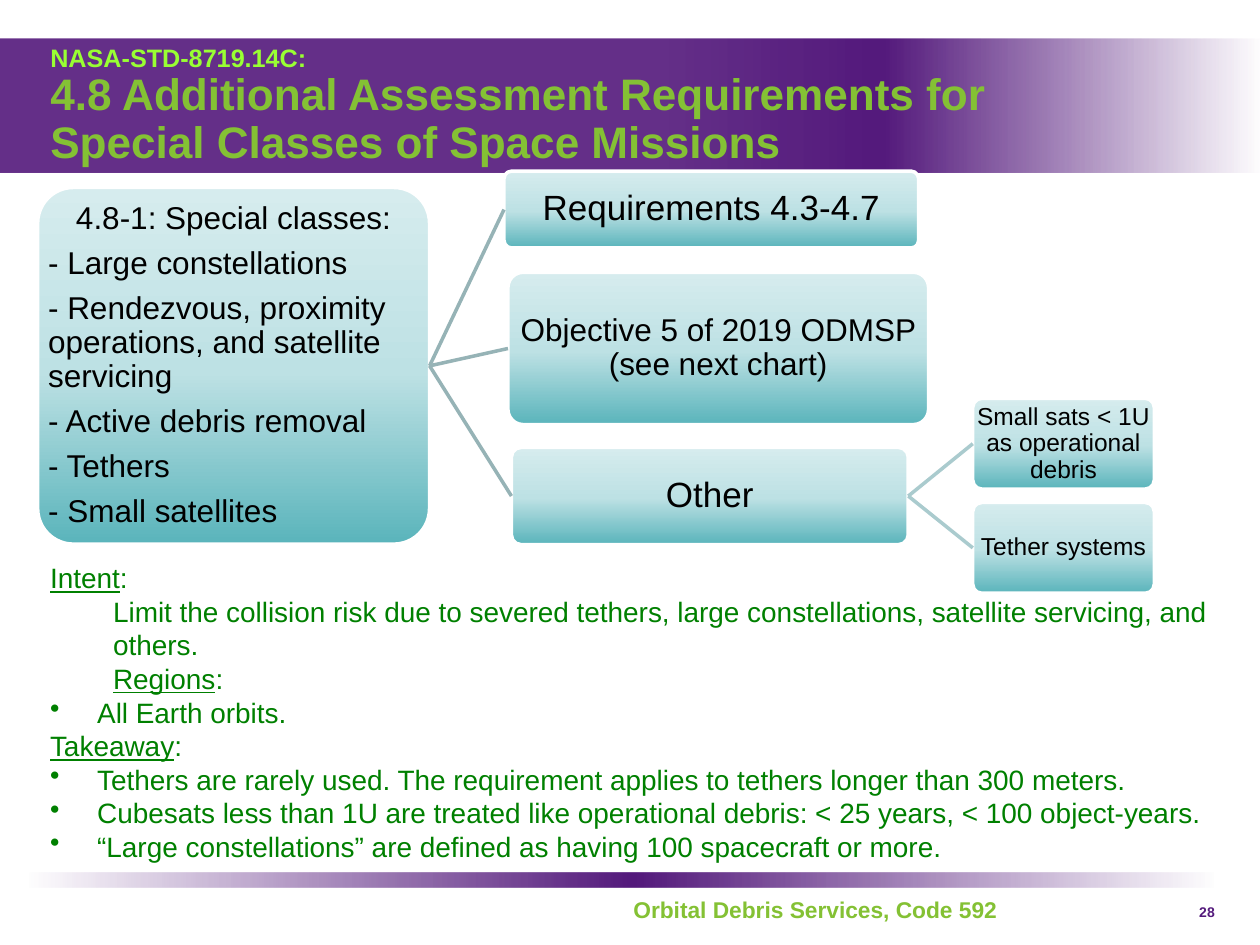
"""Build the slide on requirements for special classes of space missions."""
import pptx
import pptx.dml.color
import pptx.enum.shapes
import pptx.enum.text
import pptx.oxml
import pptx.oxml.ns
import pptx.util

Cm, Pt = pptx.util.Cm, pptx.util.Pt
RGBColor = pptx.dml.color.RGBColor
Shape = pptx.enum.shapes.MSO_SHAPE
Align = pptx.enum.text.PP_ALIGN
Anchor = pptx.enum.text.MSO_ANCHOR
qn = pptx.oxml.ns.qn

PURPLE = RGBColor(0x54, 0x1A, 0x7C)
LIME = RGBColor(0x84, 0xC1, 0x34)
BRIGHT_LIME = RGBColor(0x99, 0xFF, 0x33)
GREEN = RGBColor(0x00, 0x80, 0x00)
BLACK = RGBColor(0x00, 0x00, 0x00)
WHITE = RGBColor(0xFF, 0xFF, 0xFF)
TEAL = RGBColor(0x5A, 0xB4, 0xBB)
PALE_TEAL = RGBColor(0xBD, 0xE1, 0xE4)
MIST = RGBColor(0xD6, 0xEC, 0xEE)
GREY_TEAL = RGBColor(0x96, 0xB3, 0xB6)
LIGHT_GREY_TEAL = RGBColor(0xAA, 0xCB, 0xCE)

BANNER_STOPS = [(53, PURPLE, 90), (70, PURPLE, 100), (100, PURPLE, 0)]
RULE_STOPS = [(0, PURPLE, 0), (51, PURPLE, 100), (100, PURPLE, 0)]
BOX_STOPS = [(0, TEAL, 100), (48, PALE_TEAL, 100), (100, MIST, 100)]


def write(para, text, size=16, color=BLACK, bold=False, underline=False, font="Arial"):
    """Add a formatted span of text to a paragraph."""
    span = para.add_run()
    span.text = text
    span.font.name = font
    span.font.size = Pt(size)
    span.font.bold = bold
    span.font.underline = underline
    span.font.color.rgb = color


class Painter:
    """Draws styled elements on the current slide."""

    def __init__(self, page):
        """Keep the slide to draw on."""
        self.page = page

    def place(self, shape, area):
        """Move a shape to an area given in centimetres."""
        shape.left, shape.top, shape.width, shape.height = (Cm(n) for n in area)

    def gradient(self, shape, stops, angle):
        """Fill a shape with stops of position, colour and opacity."""
        shape.fill.gradient()
        marks = "".join(
            f'<a:gs pos="{position * 1000}"><a:srgbClr val="{color}">'
            f'<a:alpha val="{opacity * 1000}"/></a:srgbClr></a:gs>'
            for position, color, opacity in stops)
        fill = pptx.oxml.parse_xml(
            f'<a:gradFill {pptx.oxml.ns.nsdecls("a")} rotWithShape="1"><a:gsLst>{marks}</a:gsLst>'
            f'<a:lin ang="{angle * 60000}" scaled="0"/></a:gradFill>')
        properties = shape.element.spPr
        properties.replace(properties.find(qn("a:gradFill")), fill)

    def band(self, area, stops):
        """Draw a horizontal band without an outline."""
        shape = self.page.shapes.add_shape(Shape.RECTANGLE, *(Cm(n) for n in area))
        shape.shadow.inherit = False
        shape.line.fill.background()
        self.gradient(shape, stops, 0)

    def title(self, area, lines):
        """Fill the title placeholder and bring it to the front."""
        title = self.page.shapes.title
        self.place(title, area)
        frame = title.text_frame
        frame.auto_size = pptx.enum.text.MSO_AUTO_SIZE.NONE
        frame.vertical_anchor = Anchor.MIDDLE
        para = frame.paragraphs[0]
        para.alignment = Align.LEFT
        para.line_spacing = 0.9
        for index, (text, size, color) in enumerate(lines):
            if index:
                para.add_line_break()
            write(para, text, size=size, color=color, bold=True)
        title.element.getparent().append(title.element)

    def label(self, area, text="", align=Align.LEFT, **style):
        """Add a wrapped text box and return its frame."""
        box = self.page.shapes.add_textbox(*(Cm(n) for n in area))
        frame = box.text_frame
        frame.word_wrap = True
        para = frame.paragraphs[0]
        para.alignment = align
        if text:
            write(para, text, **style)
        return frame

    def notes(self, area, rows):
        """Add headings, indented lines and bullets in one text box."""
        frame = self.label(area)
        for index, (kind, indent, text) in enumerate(rows):
            para = frame.add_paragraph() if index else frame.paragraphs[0]
            properties = para._p.get_or_add_pPr()
            properties.set("marL", str(Cm(indent)))
            if kind == "bullet":
                properties.set("indent", str(-Cm(indent)))
                pptx.oxml.ns.qn("a:buChar")
                bullet = properties.makeelement(qn("a:buChar"), {"char": "•"})
                properties.append(bullet)
            write(para, text, color=GREEN, underline=kind == "heading")
            if kind == "heading":
                write(para, ":", color=GREEN)

    def box(self, area, lines, size):
        """Draw a rounded box whose first line is centred."""
        box = self.page.shapes.add_shape(Shape.ROUNDED_RECTANGLE, *(Cm(n) for n in area))
        box.adjustments[0] = 0.1
        box.shadow.inherit = False
        box.line.color.rgb = WHITE
        box.line.width = Pt(2)
        self.gradient(box, BOX_STOPS, 270)
        frame = box.text_frame
        frame.word_wrap = True
        frame.vertical_anchor = Anchor.MIDDLE
        frame.margin_left = frame.margin_right = frame.margin_top = frame.margin_bottom = 0
        for index, text in enumerate(lines):
            para = frame.add_paragraph() if index else frame.paragraphs[0]
            para.alignment = Align.LEFT if index else Align.CENTER
            para.line_spacing = 0.9
            para.space_after = Pt(size * 0.35)
            write(para, text, size=size)
        return box

    def branch(self, parent, child, color):
        """Join the right side of one box to the left side of another."""
        line = self.page.shapes.add_connector(pptx.enum.shapes.MSO_CONNECTOR.STRAIGHT, 0, 0, 0, 0)
        line.begin_connect(parent, 3)
        line.end_connect(child, 1)
        line.line.color.rgb = color
        line.line.width = Pt(2)
        properties = line.element.spPr
        properties.append(properties.makeelement(qn("a:effectLst"), {}))


def main():
    """Build and save the deck."""
    deck = pptx.Presentation()
    deck.slide_width, deck.slide_height = Cm(25.4), Cm(19.05)
    painter = Painter(deck.slides.add_slide(deck.slide_layouts[5]))

    painter.band((0, 0.79, 25.4, 2.69), BANNER_STOPS)
    painter.band((0.58, 17.6, 23.9, 0.3), RULE_STOPS)
    painter.label((12.52, 17.93, 8.18, 0.91), "Orbital Debris Services, Code 592",
                  size=13, color=LIME, bold=True)
    painter.title((0.76, 1.47, 20.14, 1.37), [
        ("NASA-STD-8719.14C:", 14.4, BRIGHT_LIME),
        ("4.8 Additional Assessment Requirements for Special Classes of Space Missions", 25.2, LIME),
    ])
    painter.notes((0.76, 11.18, 25.17, 6.4), [
        ("heading", 0, "Intent"),
        ("plain", 1.27, "Limit the collision risk due to severed tethers, large constellations, "
                        "satellite servicing, and others."),
        ("heading", 1.27, "Regions"),
        ("bullet", 0.95, "All Earth orbits."),
        ("heading", 0, "Takeaway"),
        ("bullet", 0.95, "Tethers are rarely used. The requirement applies to tethers "
                         "longer than 300 meters."),
        ("bullet", 0.95, "Cubesats less than 1U are treated like operational debris: "
                         "< 25 years, < 100 object-years."),
        ("bullet", 0.95, "“Large constellations” are defined as having 100 spacecraft or more."),
    ])

    classes = painter.box((0.76, 3.78, 7.9, 7.19), [
        "4.8-1: Special classes:", "- Large constellations",
        "- Rendezvous, proximity operations, and satellite servicing",
        "- Active debris removal", "- Tethers", "- Small satellites"], 18)
    requirements = painter.box((10.16, 3.45, 8.36, 1.55), ["Requirements 4.3-4.7"], 20)
    objective = painter.box((10.24, 5.49, 8.48, 3.07),
                            ["Objective 5 of 2019 ODMSP (see next chart)"], 18)
    other = painter.box((10.31, 9.02, 8, 1.96), ["Other"], 20)
    for child in (requirements, objective, other):
        painter.branch(classes, child, GREY_TEAL)
    for row, text in enumerate(["Small sats < 1U as operational debris", "Tether systems"]):
        child = painter.box((19.61, 8.03 + 2.1 * row, 3.66, 1.83), [text], 14)
        painter.branch(other, child, LIGHT_GREY_TEAL)

    painter.label((23.75, 18.08, 0.99, 0.64), "28", align=Align.RIGHT,
                  size=8, color=PURPLE, bold=True)
    deck.save("out.pptx")


if __name__ == "__main__":
    main()
